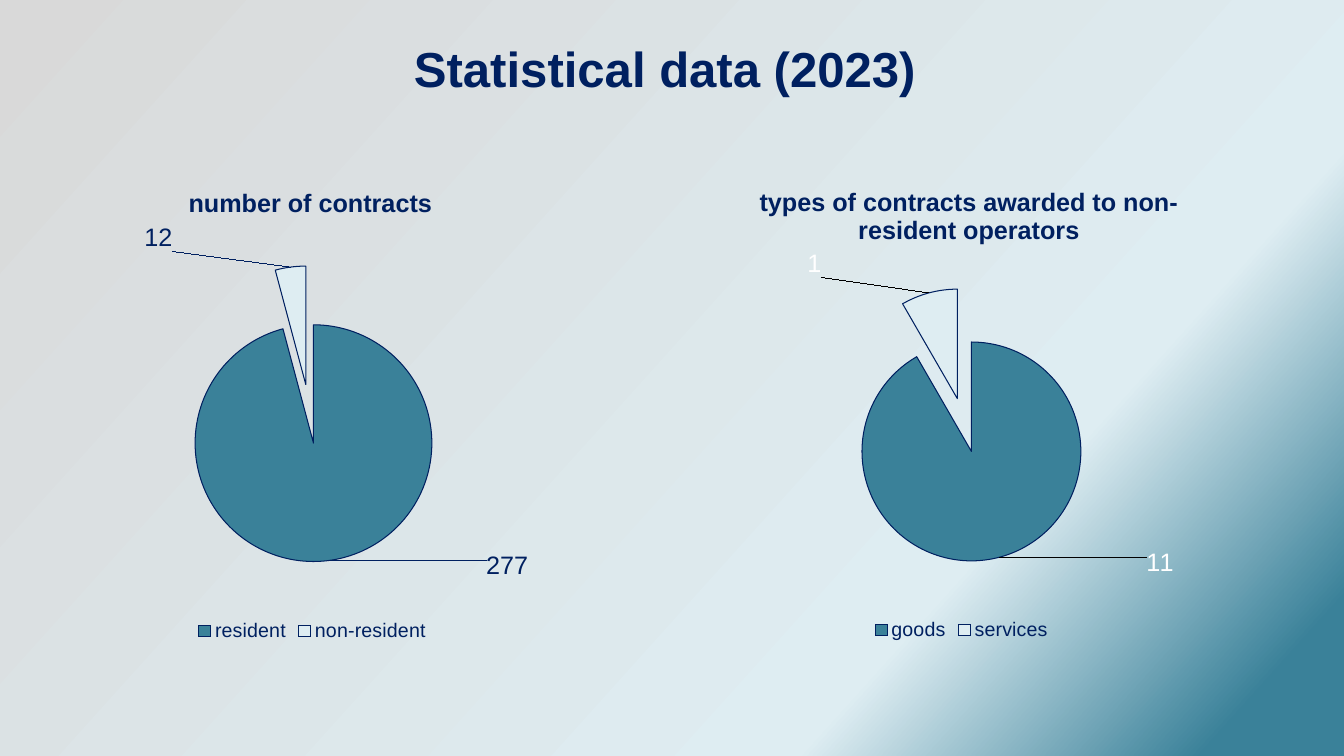
from dataclasses import dataclass

from copy import deepcopy
from lxml.etree import SubElement
from pptx import Presentation
from pptx.chart.data import CategoryChartData as ChartData
from pptx.dml.color import RGBColor
from pptx.enum.chart import XL_CHART_TYPE as ChartType
from pptx.enum.chart import XL_LABEL_POSITION as LabelPosition
from pptx.enum.chart import XL_LEGEND_POSITION as LegendPosition
from pptx.enum.text import MSO_ANCHOR as Anchor
from pptx.enum.text import PP_ALIGN as Align
from pptx.oxml.ns import qn
from pptx.util import Pt

NAVY, TEAL, PALE, GREY, WHITE = "002060", "3A8199", "DEEDF2", "D9D9D9", "FFFFFF"
FONT = "Arial"
CHART_WIDTH, CHART_HEIGHT = 398.88, 349.2


@dataclass
class Pie:
    title: str
    left: float
    top: float
    categories: tuple[str, ...]
    values: tuple[int, ...]
    label_color: str
    outline_series: bool
    title_spot: dict[str, float]
    plot_area: dict[str, float]
    label_shifts: tuple[dict[str, float], ...]


PIES = (
    Pie("number of contracts", 23.76, 112.32, ("resident", "non-resident"), (277, 12),
        NAVY, True, {"x": 0.27, "y": 0.05},
        {"x": 0.23, "y": 0.22, "w": 0.53, "h": 0.61},
        ({"x": 0.28, "y": -0.03}, {"x": -0.21, "y": -0.02})),
    Pie("types of contracts awarded to non-resident operators", 487.44, 111.6,
        ("goods", "services"), (11, 1),
        WHITE, False, {"x": 0.13, "y": 0.05},
        {"x": 0.26, "y": 0.27, "w": 0.49, "h": 0.56},
        ({"x": 0.26, "y": -0.03}, {"x": -0.19, "y": -0.02})),
)


def rgb(value: str) -> RGBColor:
    return RGBColor.from_string(value)


def style_font(font, size: float, color: str, bold: bool = False) -> None:
    for name, value in {"name": FONT, "size": Pt(size), "bold": bold}.items():
        setattr(font, name, value)
    font.color.rgb = rgb(color)


def add_layout(parent, index: int, values: dict[str, float], modes: dict[str, str]) -> None:
    for old in parent.findall(qn("c:layout")):
        parent.remove(old)
    layout = SubElement(parent, qn("c:layout"))
    parent.insert(index, layout)
    manual = SubElement(layout, qn("c:manualLayout"))
    for name, value in {**modes, **values}.items():
        SubElement(manual, qn(f"c:{name}")).set("val", str(value))


def paint_background(page) -> None:
    fill = page.background.fill
    fill.gradient()
    stops = page._element.find(".//" + qn("a:gsLst"))
    stops.append(deepcopy(stops[-1]))
    for stop, (position, color) in zip(
            fill.gradient_stops, ((0, GREY), (0.73, PALE), (0.93, TEAL))):
        stop.position = position
        stop.color.rgb = rgb(color)
    fill.gradient_angle = 318


def add_heading(page, text: str) -> None:
    box = page.shapes.add_textbox(Pt(174.24), Pt(0), Pt(601.2), Pt(96.48))
    frame = box.text_frame
    frame.word_wrap = True
    frame.vertical_anchor = Anchor.MIDDLE
    para = frame.paragraphs[0]
    para.alignment = Align.CENTER
    span = para.add_run()
    span.text = text
    style_font(span.font, 35.1, NAVY, True)


def draw_outline(line) -> None:
    line.color.rgb = rgb(NAVY)
    line.width = Pt(0.75)


def add_pie(page, pie: Pie) -> None:
    data = ChartData()
    data.categories = pie.categories
    data.add_series(pie.title, pie.values)
    chart = page.shapes.add_chart(
        ChartType.PIE, Pt(pie.left), Pt(pie.top),
        Pt(CHART_WIDTH), Pt(CHART_HEIGHT), data).chart
    style_font(chart.font, 18, pie.label_color)

    chart.has_title = True
    span = chart.chart_title.text_frame.paragraphs[0].add_run()
    span.text = pie.title
    style_font(span.font, 18, NAVY, True)
    add_layout(chart.chart_title._element, 1, pie.title_spot,
               {"xMode": "edge", "yMode": "edge"})

    chart.has_legend = True
    chart.legend.position = LegendPosition.BOTTOM
    chart.legend.include_in_layout = False
    style_font(chart.legend.font, 14, NAVY)

    plot = chart.plots[0]
    plot.vary_by_categories = True
    add_layout(chart._chartSpace.find(".//" + qn("c:plotArea")), 0, pie.plot_area,
               {"layoutTarget": "inner", "xMode": "edge", "yMode": "edge"})

    series = plot.series[0]
    outline = series.format.line
    if pie.outline_series:
        draw_outline(outline)
    explosion = SubElement(series._element, qn("c:explosion"))
    explosion.set("val", "25")
    series._element.find(qn("c:spPr")).addnext(explosion)
    series.data_labels.show_value = True
    style_font(series.data_labels.font, 18, pie.label_color)

    for index, (color, shift) in enumerate(zip((TEAL, PALE), pie.label_shifts)):
        point = series.points[index]
        point.format.fill.solid()
        point.format.fill.fore_color.rgb = rgb(color)
        draw_outline(point.format.line)
        label = point.data_label
        style_font(label.font, 18, pie.label_color)
        label.position = LabelPosition.OUTSIDE_END
        add_layout(label._get_or_add_dLbl(), 1, shift, {})


def main() -> None:
    deck = Presentation()
    deck.slide_width, deck.slide_height = Pt(960), Pt(540)
    page = deck.slides.add_slide(deck.slide_layouts[6])
    paint_background(page)
    add_heading(page, "Statistical data (2023)")
    for pie in PIES:
        add_pie(page, pie)
    deck.save("out.pptx")


if __name__ == "__main__":
    main()
